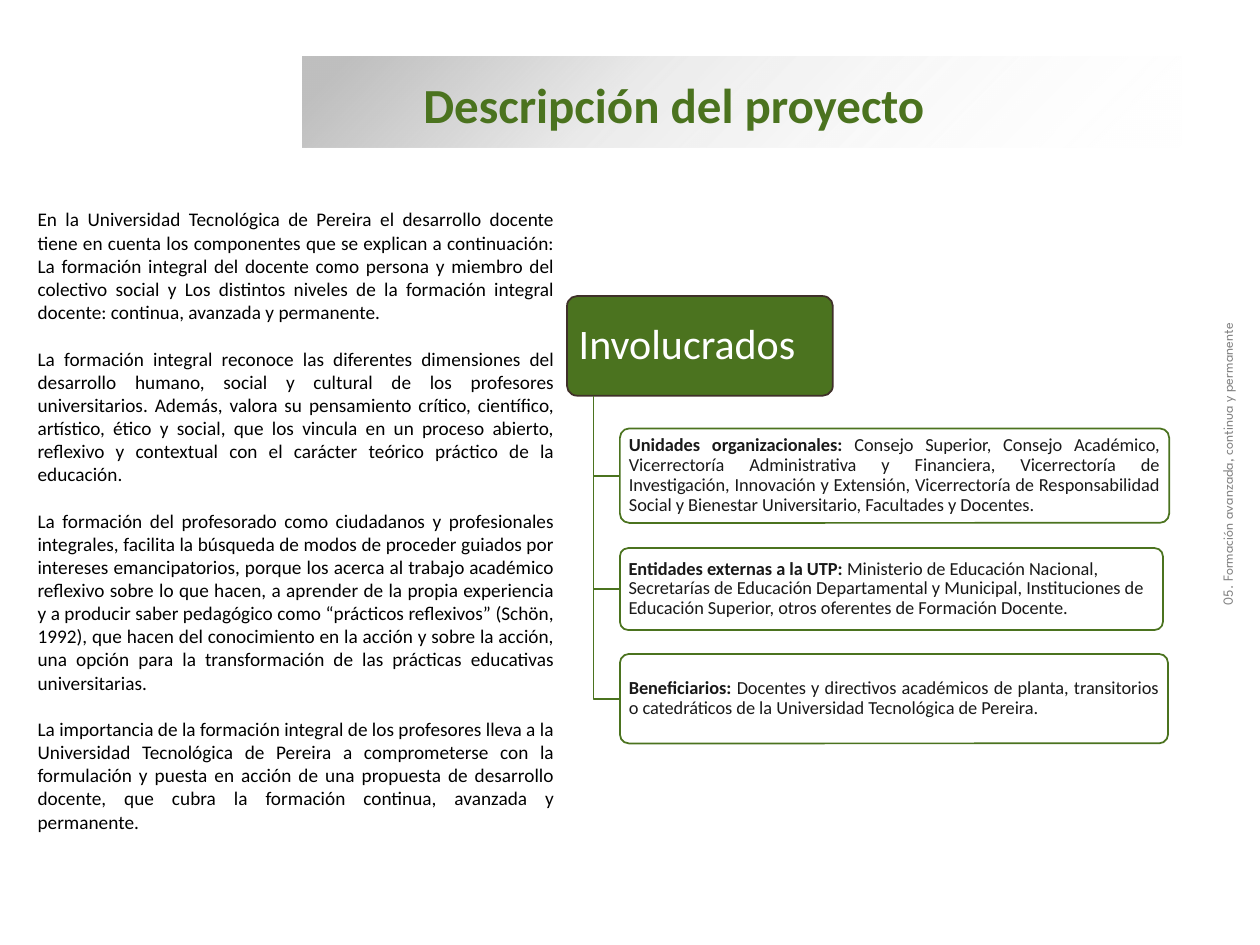
import pptx
import pptx.dml.color
import pptx.enum.shapes
import pptx.enum.text
import pptx.oxml
import pptx.oxml.ns
import pptx.util

Inches, Pt = pptx.util.Inches, pptx.util.Pt
RGBColor = pptx.dml.color.RGBColor
SHAPE = pptx.enum.shapes.MSO_SHAPE
ALIGN = pptx.enum.text.PP_ALIGN
ANCHOR = pptx.enum.text.MSO_ANCHOR

GREEN = RGBColor(0x4B, 0x73, 0x1F)
BROWN = RGBColor(0x3F, 0x30, 0x29)
WHITE = RGBColor(0xFF, 0xFF, 0xFF)
BLACK = RGBColor(0x00, 0x00, 0x00)
INK = RGBColor(0x19, 0x19, 0x19)
GREY = RGBColor(0x80, 0x80, 0x80)
SILVER = RGBColor(0xBF, 0xBF, 0xBF)

PARAGRAPHS = [
    "En la Universidad Tecnológica de Pereira el desarrollo docente tiene en cuenta los "
    "componentes que se explican a continuación: La formación integral del docente como "
    "persona y miembro del colectivo social y Los distintos niveles de la formación integral "
    "docente: continua, avanzada y permanente.",
    "La formación integral reconoce las diferentes dimensiones del desarrollo humano, social y "
    "cultural de los profesores universitarios. Además, valora su pensamiento crítico, "
    "científico, artístico, ético y social, que los vincula en un proceso abierto, reflexivo y "
    "contextual con el carácter teórico práctico de la educación.",
    "La formación del profesorado como ciudadanos y profesionales integrales, facilita la "
    "búsqueda de modos de proceder guiados por intereses emancipatorios, porque los acerca al "
    "trabajo académico reflexivo sobre lo que hacen, a aprender de la propia experiencia y a "
    "producir saber pedagógico como “prácticos reflexivos” (Schön, 1992), que hacen del "
    "conocimiento en la acción y sobre la acción, una opción para la transformación de las "
    "prácticas educativas universitarias.",
    "La importancia de la formación integral de los profesores lleva a la Universidad "
    "Tecnológica de Pereira a comprometerse con la formulación y puesta en acción de una "
    "propuesta de desarrollo docente, que cubra la formación continua, avanzada y permanente.",
]

# top, width, height, alignment, heading, members
GROUPS = [
    (3.4, 4.36, 0.75, ALIGN.JUSTIFY, "Unidades organizacionales: ",
     "Consejo Superior, Consejo Académico, Vicerrectoría Administrativa y Financiera, "
     "Vicerrectoría de Investigación, Innovación y Extensión, Vicerrectoría de "
     "Responsabilidad Social y Bienestar Universitario, Facultades y Docentes."),
    (4.35, 4.31, 0.65, ALIGN.LEFT, "Entidades externas a la UTP: ",
     "Ministerio de Educación Nacional, Secretarías de Educación Departamental y Municipal, "
     "Instituciones de Educación Superior, otros oferentes de Formación Docente."),
    (5.19, 4.35, 0.71, ALIGN.JUSTIFY, "Beneficiarios: ",
     "Docentes y directivos académicos de planta, transitorios o catedráticos de la "
     "Universidad Tecnológica de Pereira."),
]
TRUNK_X, TRUNK_TOP, GROUP_X = 4.71, 3.14, 4.92


class Builder:
    def __init__(self, slide, font="Calibri"):
        self.slide = slide
        self.font = font

    def add_text_run(self, p, text, size, color, bold=False, font=None):
        r = p.add_run()
        r.text = text
        r.font.name = font or self.font
        r.font.size = Pt(size)
        r.font.bold = bold
        r.font.color.rgb = color

    def title(self, text, box, size, color):
        sp = self.slide.shapes.title
        sp.left, sp.top, sp.width, sp.height = map(Inches, box)
        tf = sp.text_frame
        tf.auto_size = pptx.enum.text.MSO_AUTO_SIZE.NONE
        tf.vertical_anchor = ANCHOR.MIDDLE
        p = tf.paragraphs[0]
        p.alignment = ALIGN.LEFT
        self.add_text_run(p, text, size, color, bold=True)
        return sp

    def text(self, paragraphs, box, size, color, align, gap=0, font=None, rotation=0):
        sp = self.slide.shapes.add_textbox(*map(Inches, box))
        sp.rotation = rotation
        tf = sp.text_frame
        tf.word_wrap = True
        for i, text in enumerate(paragraphs):
            p = tf.add_paragraph() if i else tf.paragraphs[0]
            p.alignment = align
            if i:
                p.space_before = Pt(gap)
            self.add_text_run(p, text, size, color, font=font)

    def band(self, box, stops, angle):
        """Add a borderless rectangle; stops are (percent, colour, opacity percent)."""
        sp = self.slide.shapes.add_shape(SHAPE.RECTANGLE, *map(Inches, box))
        sp.shadow.inherit = False
        sp.line.fill.background()
        sp.fill.gradient()
        gs_list = sp._element.spPr.find(".//" + pptx.oxml.ns.qn("a:gsLst"))
        for gs in list(gs_list):
            gs_list.remove(gs)
        for position, color, opacity in stops:
            gs_list.append(pptx.oxml.parse_xml(
                f'<a:gs {pptx.oxml.ns.nsdecls("a")} pos="{position * 1000}">'
                f'<a:srgbClr val="{color}"><a:alpha val="{opacity * 1000}"/></a:srgbClr></a:gs>'))
        # python-pptx counts gradient angles counter-clockwise
        sp.fill.gradient_angle = 360 - angle
        return sp

    def box(self, box, fill, line, runs, size, color, inset, align=ALIGN.LEFT):
        """Add a rounded box; runs are (text, bold)."""
        sp = self.slide.shapes.add_shape(SHAPE.ROUNDED_RECTANGLE, *map(Inches, box))
        sp.adjustments[0] = 0.1
        sp.shadow.inherit = False
        sp.fill.solid()
        sp.fill.fore_color.rgb = fill
        sp.line.color.rgb = line
        sp.line.width = Pt(1)
        tf = sp.text_frame
        tf.word_wrap = True
        tf.vertical_anchor = ANCHOR.MIDDLE
        tf.margin_left = tf.margin_right = Inches(inset)
        tf.margin_top = tf.margin_bottom = Inches(0.04)
        p = tf.paragraphs[0]
        p.alignment = align
        p.line_spacing = 0.9
        for text, bold in runs:
            self.add_text_run(p, text, size, color, bold)

    def branch(self, x1, y1, x2, y2, color):
        """Draw a line down from the first point, then across to the second."""
        fb = self.slide.shapes.build_freeform(Inches(x1), Inches(y1))
        fb.add_line_segments([(Inches(x1), Inches(y2)), (Inches(x2), Inches(y2))], close=False)
        sp = fb.convert_to_shape()
        sp.shadow.inherit = False
        sp.fill.background()
        sp.line.color.rgb = color
        sp.line.width = Pt(1)


def main():
    prs = pptx.Presentation()
    prs.slide_width, prs.slide_height = Inches(10), Inches(7.5)
    s = prs.slides.add_slide(prs.slide_layouts[5])
    b = Builder(s)

    band = b.band((2.4, 0.45, 6.98, 0.72),
                  [(5, SILVER, 100), (37, SILVER, 31), (100, WHITE, 0)], 45)
    title = b.title("Descripción del proyecto", (3.26, 0.54, 6.2, 0.57), 28, GREEN)
    title._element.addprevious(band._element)

    b.text(PARAGRAPHS, (0.2, 1.6, 4.3, 5.1), 11, BLACK, ALIGN.JUSTIFY, gap=13.4)

    b.box((4.5, 2.35, 2.11, 0.79), GREEN, BROWN, [("Involucrados", False)], 24, WHITE, 0.07)
    for top, width, height, align, heading, members in GROUPS:
        b.branch(TRUNK_X, TRUNK_TOP, GROUP_X, top + height / 2, GREEN)
        b.box((GROUP_X, top, width, height), WHITE, GREEN,
              [(heading, True), (members, False)], 10.5, INK, 0.05, align)

    b.text(["05. Formación avanzada, continua y permanente"], (7.39, 3.5, 4.84, 0.37),
           8, GREY, ALIGN.CENTER, font="League Spartan", rotation=270)

    prs.save("out.pptx")


if __name__ == "__main__":
    main()
